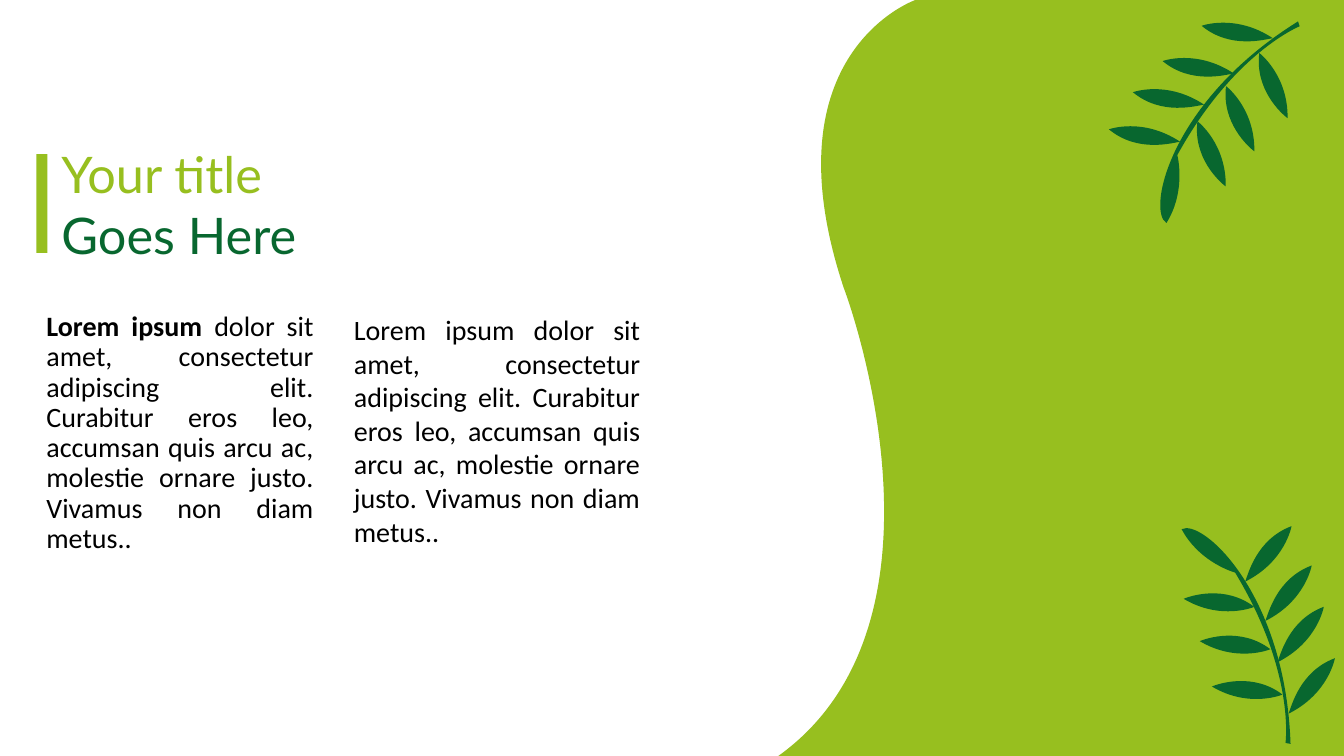
"""Build a title slide with two text columns beside a curved green panel with two leafy branches."""
import dataclasses
import math

import pptx
import pptx.dml.color
import pptx.enum.shapes
import pptx.enum.text
import pptx.oxml.ns
import pptx.oxml.xmlchemy
import pptx.util

WIDTH, HEIGHT = 13.33, 7.5

TITLE = [("Your title", "lime"), ("Goes Here", "forest")]
LEAD = "Lorem ipsum "
REST = (
    "dolor sit amet, consectetur adipiscing elit. Curabitur eros leo, "
    "accumsan quis arcu ac, molestie ornare justo. Vivamus non diam metus.."
)
COLUMNS = [
    {"frame": (0.36, 3.05, 2.85, 2.46), "spans": [(LEAD, True), (REST, False)],
     "format": {"line_spacing": 0.9, "space_before": pptx.util.Pt(10)}},
    {"frame": (3.41, 3.05, 3.04, 2.46), "spans": [(LEAD + REST, False)],
     "format": {"line_spacing": 1.0, "space_before": pptx.util.Pt(0)}},
]
TITLE_FRAME = (0.51, 1.37, 5.54, 1.31)
BAR_FRAME = (0.36, 1.53, 0.11, 0.98)

PANEL = [
    (9.08, 0),
    (9.08, 0), (7.59, 0.52), (8.37, 2.86),
    (8.47, 3.12), (9.53, 6.2), (7.72, HEIGHT),
    (9.08, HEIGHT), (WIDTH, HEIGHT), (WIDTH, HEIGHT),
    (WIDTH, 0), (WIDTH, 0), (WIDTH, 0),
]

STEM = [
    (0, 0),
    (0, 0), (0.1, -0.7), (-0.5, -1.69),
    (-0.57, -1.71), (-0.87, -1.82), (-1.03, -2.12),
    (-0.83, -2.23), (0, -1.49), (0.05, 0.01),
    (0, 0), (0, 0), (0, 0),
]
LEFT_LEAF = [(0, 0), (0, 0), (-0.33, 0.14), (-0.7, -0.08), (-0.63, -0.11), (-0.29, -0.22), (0, 0)]
RIGHT_LEAF = [(0, 0), (0, 0), (-0.06, 0.35), (-0.46, 0.55), (-0.43, 0.48), (-0.35, 0.13), (0, 0)]
BRANCH_PARTS = [
    (STEM, [(0, 0)]),
    (LEFT_LEAF, [(-0.03, -0.48), (-0.15, -0.93), (-0.31, -1.35)]),
    (RIGHT_LEAF, [(0.49, -0.84), (0.38, -1.35), (0.26, -1.76), (0.06, -2.15)]),
]
DRAWN_ROTATION = 285
BRANCHES = [((12.75, 7.37), 285), ((12.89, 0.26), 165)]


@dataclasses.dataclass(frozen=True)
class Theme:
    """Colours, fonts and type sizes."""
    lime: str = "97BF1F"
    forest: str = "08672F"
    ink: str = "000000"
    title_font: str = "Lato"
    body_font: str = "Calibri"
    title_size: int = 36
    body_size: int = 20


THEME = Theme()


def apply(target, values):
    """Set every attribute in a dict of format values."""
    for name, value in values.items():
        setattr(target, name, value)


def place(shape, frame):
    """Move and size a shape."""
    names = ("left", "top", "width", "height")
    apply(shape, dict(zip(names, map(pptx.util.Inches, frame))))


def paint(shape, colour):
    """Fill a shape with one flat colour."""
    shape.shadow.inherit = False
    shape.fill.solid()
    shape.fill.fore_color.rgb = pptx.dml.color.RGBColor.from_string(colour)
    shape.line.fill.background()


def turn(point, degrees):
    """Turn a point clockwise about the origin."""
    x, y = point
    cosine, sine = math.cos(math.radians(degrees)), math.sin(math.radians(degrees))
    return x * cosine - y * sine, x * sine + y * cosine


def shift(point, offset):
    """Move a point by an offset."""
    return point[0] + offset[0], point[1] + offset[1]


def unrotate(points, rotation):
    """Return the points as they lie before the shape is rotated about its centre."""
    level = [turn(point, -rotation) for point in points]
    middle = tuple((min(axis) + max(axis)) / 2 for axis in zip(*level))
    centre = turn(middle, rotation)
    return [shift(point, (centre[0] - middle[0], centre[1] - middle[1])) for point in level]


def curve_edges(shape):
    """Turn each three straight edges of an outline into one cubic curve."""
    qn = pptx.oxml.ns.qn
    edges = list(shape._element.iter(qn("a:lnTo")))
    for index in range(0, len(edges), 3):
        curve = pptx.oxml.xmlchemy.OxmlElement("a:cubicBezTo")
        edges[index].addprevious(curve)
        for edge in edges[index:index + 3]:
            curve.append(edge.find(qn("a:pt")))
            edge.getparent().remove(edge)


def draw_outline(shapes, points, colour, rotation=0):
    """Draw a closed outline of cubic curves."""
    corners = [tuple(map(pptx.util.Inches, point)) for point in unrotate(points, rotation)]
    builder = shapes.build_freeform(*corners[0])
    builder.add_line_segments(corners[1:], close=True)
    shape = builder.convert_to_shape()
    curve_edges(shape)
    paint(shape, colour)
    shape.rotation = rotation


def draw_branch(page, foot, rotation):
    """Draw a stem and its leaves as one group."""
    shapes = page.shapes.add_group_shape().shapes
    for outline, tips in BRANCH_PARTS:
        for tip in tips:
            points = [
                shift(turn(shift(point, tip), rotation - DRAWN_ROTATION), foot)
                for point in outline
            ]
            draw_outline(shapes, points, THEME.forest, rotation)


def prepare(box, frame):
    """Place a text placeholder and return its text frame."""
    place(box, frame)
    apply(box.text_frame, {
        "word_wrap": True,
        "auto_size": pptx.enum.text.MSO_AUTO_SIZE.NONE,
        "vertical_anchor": pptx.enum.text.MSO_ANCHOR.TOP,
    })
    return box.text_frame


def write(para, text, colour, font):
    """Add a formatted span to a paragraph."""
    span = para.add_run()
    span.text = text
    apply(span.font, font)
    span.font.color.rgb = pptx.dml.color.RGBColor.from_string(colour)


def fill_title(box):
    """Write the two-colour title."""
    frame = prepare(box, TITLE_FRAME)
    for index, (text, colour) in enumerate(TITLE):
        para = frame.add_paragraph() if index else frame.paragraphs[0]
        para.alignment = pptx.enum.text.PP_ALIGN.LEFT
        write(para, text, getattr(THEME, colour),
              {"name": THEME.title_font, "size": pptx.util.Pt(THEME.title_size)})


def fill_column(box, column):
    """Write one justified column without a bullet."""
    para = prepare(box, column["frame"]).paragraphs[0]
    apply(para, {"alignment": pptx.enum.text.PP_ALIGN.JUSTIFY, **column["format"]})
    properties = para._p.get_or_add_pPr()
    for name in ("marL", "indent"):
        properties.set(name, "0")
    properties.append(pptx.oxml.xmlchemy.OxmlElement("a:buNone"))
    font = {"name": THEME.body_font, "size": pptx.util.Pt(THEME.body_size)}
    for text, bold in column["spans"]:
        write(para, text, THEME.ink, {**font, "bold": bold})


def main():
    """Assemble and save the deck."""
    deck = pptx.Presentation()
    apply(deck, {"slide_width": pptx.util.Inches(WIDTH), "slide_height": pptx.util.Inches(HEIGHT)})
    page = deck.slides.add_slide(deck.slide_layouts.get_by_name("Two Content"))
    title, *bodies = page.placeholders
    fill_title(title)
    for box, column in zip(bodies, COLUMNS):
        fill_column(box, column)
    draw_outline(page.shapes, PANEL, THEME.lime)
    bar = page.shapes.add_shape(
        pptx.enum.shapes.MSO_SHAPE.RECTANGLE, *map(pptx.util.Inches, BAR_FRAME))
    paint(bar, THEME.lime)
    for foot, rotation in BRANCHES:
        draw_branch(page, foot, rotation)
    deck.save("out.pptx")


if __name__ == "__main__":
    main()
